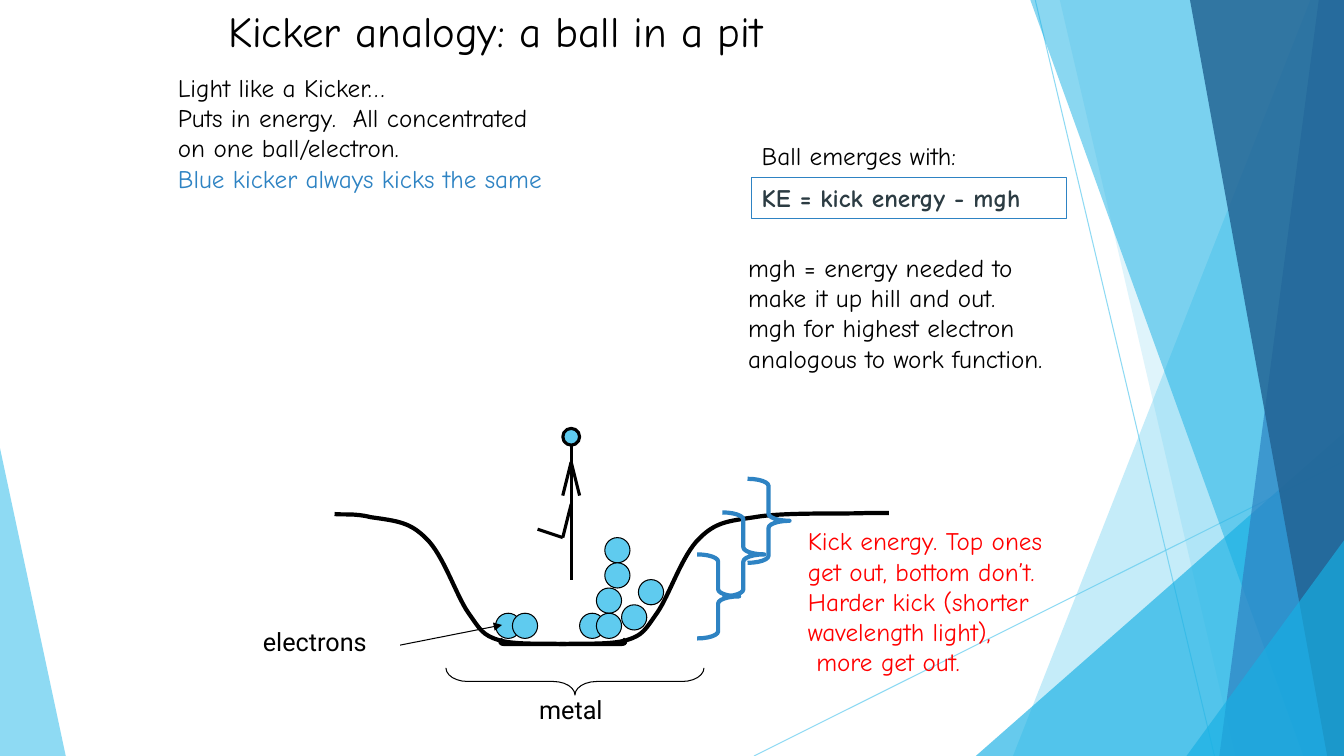
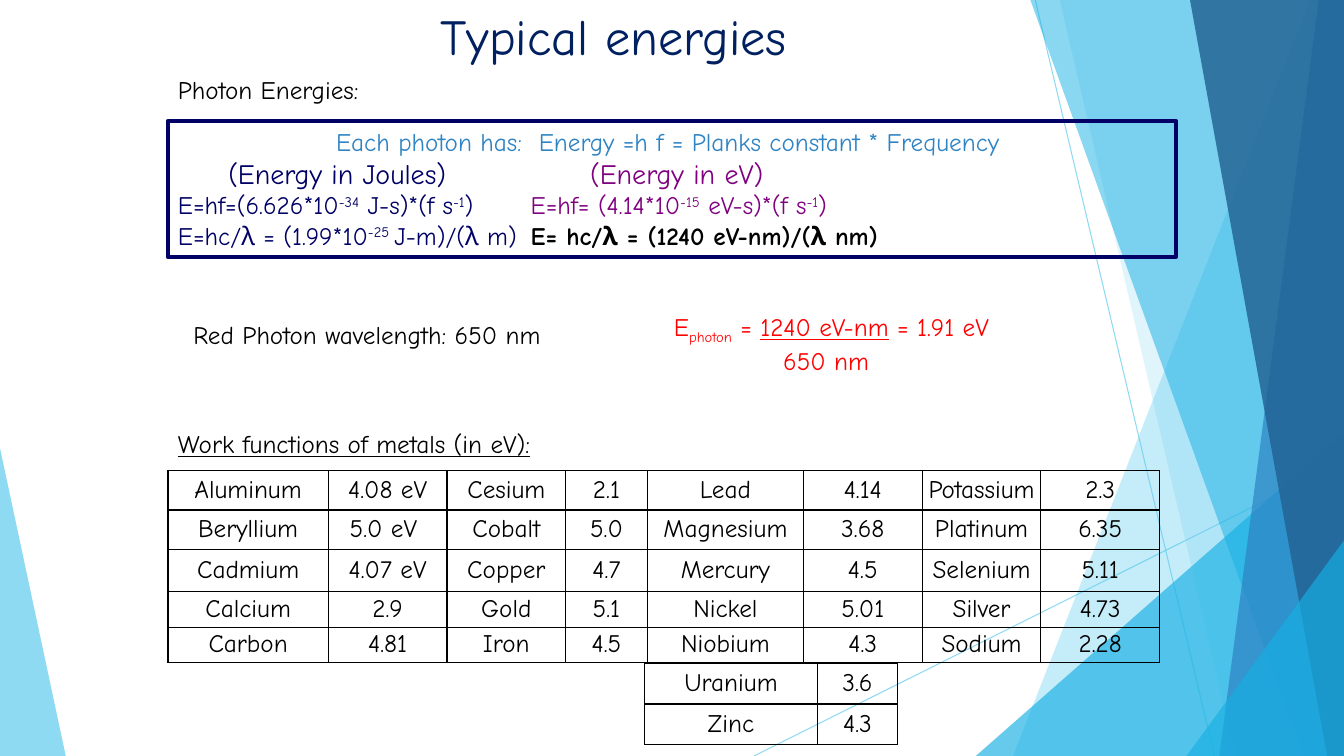
from dataclasses import dataclass
from lxml.etree import SubElement
from pptx import Presentation
from pptx.dml.color import RGBColor
from pptx.enum.shapes import MSO_CONNECTOR, MSO_SHAPE
from pptx.enum.text import MSO_ANCHOR, PP_ALIGN
from pptx.oxml.ns import qn
from pptx.util import Pt

BLACK = RGBColor(0x00, 0x00, 0x00)
SKY = RGBColor(0x5F, 0xCB, 0xEF)
CYAN = RGBColor(0x17, 0xB0, 0xE4)
BLUE = RGBColor(0x2E, 0x83, 0xC3)
STEEL = RGBColor(0x22, 0x62, 0x92)
SLATE = RGBColor(0x2C, 0x3C, 0x43)
NAVY = RGBColor(0x00, 0x00, 0x66)
TITLE_NAVY = RGBColor(0x00, 0x20, 0x60)
PURPLE = RGBColor(0x80, 0x00, 0x80)
RED = RGBColor(0xFF, 0x00, 0x00)
FONT, LABEL_FONT = "Comic Neue", "Roboto"
BODY = 18
WIDTH, HEIGHT = 960, 540

RAYS = [((538.6, 540), (960, 329.5)), ((739.5, 0), (867.5, 540))]
FACETS = [
    (SKY, 70, [(0, 320), (47, 540), (0, 540)]),
    (SKY, 36, [(936, 0), (723.6, 540), (960, 540), (960, 0)]),
    (SKY, 20, [(757, 0), (882.5, 540), (960, 540), (960, 0)]),
    (CYAN, 66, [(697, 540), (960, 309), (960, 540)]),
    (CYAN, 50, [(736, 0), (931, 540), (960, 540), (960, 0)]),
    (BLUE, 70, [(942, 0), (871, 540), (960, 540), (960, 0)]),
    (STEEL, 82, [(850, 0), (948, 540), (960, 540), (960, 0)]),
    (CYAN, 66, [(847.5, 540), (960, 386), (960, 540)]),
]

PIT_AXIS = 162
PIT_SLOPE = [
    (119.3, 150.5), (119.3, 151.2), (114.2, 153.4), (120.7, 154.1),
    (127.2, 154.1), (145.2, 154.1), (159.6, 154.1),
    (174, 153.4), (196.3, 154.8), (207.8, 151.2),
    (219.4, 147.6), (220.8, 144), (229.4, 131.8),
    (238.1, 119.5), (247.4, 90), (259.7, 78.5),
    (271.2, 67), (279.8, 66.2), (299.3, 63.4),
]
RIGHT_RIM = [(319.4, 59.8), (361.9, 61.2), (377.8, 60.5),
             (393.6, 60.5), (395.8, 60.5), (395, 60.5)]
LEFT_RIM = [(13.4, 60.5), (4.8, 61.9), (-1, 61.2)]
BALLS = [(174, 132), (186, 114), (114, 132), (126, 132), (192, 78),
         (192, 96), (216, 108), (186, 132), (204, 126)]
KICKER = [((168, 54), (168, 108)), ((168, 54), (162, 78)), ((144, 72), (162, 78)),
          ((168, 0), (168, 54)), ((168, 24), (162, 48)), ((168, 24), (174, 48))]
KICK_BRACES = [(294, 36), (276, 60), (258, 90)]

METALS = [
    ["Aluminum", "4.08 eV", "Cesium", "2.1", "Lead", "4.14", "Potassium", "2.3"],
    ["Beryllium", "5.0 eV ", "Cobalt", "5.0", "Magnesium", "3.68", "Platinum", "6.35"],
    ["Cadmium", "4.07 eV", "Copper", "4.7", "Mercury", "4.5", "Selenium", "5.11"],
    ["Calcium", "2.9", "Gold", "5.1", "Nickel", "5.01", "Silver", "4.73"],
    ["Carbon", "4.81", "Iron", "4.5", "Niobium", "4.3", "Sodium", "2.28"],
]
MORE_METALS = [["Uranium", "3.6"], ["Zinc", "4.3"]]


@dataclass
class Run:
    """A stretch of text that differs from its paragraph."""
    text: str
    color: RGBColor = None
    bold: bool = None
    underline: bool = None
    baseline: int = 0


@dataclass
class Para:
    """A paragraph: its runs and what they share."""
    runs: list
    color: RGBColor = BLACK
    size: float = BODY
    font: str = FONT
    bold: bool = False
    align: PP_ALIGN = PP_ALIGN.LEFT
    stops: tuple = ()


def sup(text, color=None):
    """Return a raised run."""
    return Run(text, color, baseline=30)


def fill_para(p, para):
    """Write one Para into a paragraph object."""
    p.alignment = para.align
    if para.stops:
        tabs = SubElement(p._p.get_or_add_pPr(), qn("a:tabLst"))
        for stop in para.stops:
            SubElement(tabs, qn("a:tab"), pos=str(Pt(stop)), algn="l")
    p.font.name, p.font.size = para.font, Pt(para.size)
    p.font.bold, p.font.color.rgb = para.bold, para.color
    for item in para.runs:
        run = item if isinstance(item, Run) else Run(item)
        r = p.add_run()
        r.text = run.text
        r.font.bold, r.font.underline = run.bold, run.underline
        if run.color is not None:
            r.font.color.rgb = run.color
        if run.baseline:
            r._r.get_or_add_rPr().set("baseline", str(run.baseline * 1000))


def add_text(s, x, y, w, h, paras):
    """Add a wrapped text box holding the given paragraphs."""
    sp = s.shapes.add_textbox(Pt(x), Pt(y), Pt(w), Pt(h))
    tf = sp.text_frame
    tf.word_wrap = True
    for i, para in enumerate(paras):
        fill_para(tf.add_paragraph() if i else tf.paragraphs[0], para)
    return sp


def plain(*lines, **style):
    """Return one Para for each line, all in the same style."""
    return [Para([line], **style) for line in lines]


def outline(sp, color, width):
    """Give a shape or connector a solid line."""
    sp.line.color.rgb = color
    sp.line.width = Pt(width)


def fade(sp, percent):
    """Set the opacity of every colour of a shape."""
    for color in sp._element.iter(qn("a:srgbClr")):
        SubElement(color, qn("a:alpha"), val=str(percent * 1000))


def add_line(s, start, end, color=BLACK, width=0.75, arrow=False):
    """Add a straight line, with an arrowhead at its end if asked."""
    c = s.shapes.add_connector(MSO_CONNECTOR.STRAIGHT, *map(Pt, start + end))
    outline(c, color, width)
    if arrow:
        SubElement(c.line._get_or_add_ln(), qn("a:tailEnd"), type="triangle")
    SubElement(c._element.spPr, qn("a:effectLst"))
    return c


def add_preset(s, kind, x, y, w, h, color, width, fill=None):
    """Add an outlined preset shape."""
    sp = s.shapes.add_shape(kind, Pt(x), Pt(y), Pt(w), Pt(h))
    sp.shadow.inherit = False
    outline(sp, color, width)
    if fill is None:
        sp.fill.background()
    else:
        sp.fill.solid()
        sp.fill.fore_color.rgb = fill
    return sp


def add_outline(s, points, close):
    """Add a freeform through the given points."""
    pts = [(Pt(x), Pt(y)) for x, y in points]
    fb = s.shapes.build_freeform(*pts[0], scale=1.0)
    fb.add_line_segments(pts[1:], close=close)
    sp = fb.convert_to_shape()
    sp.shadow.inherit = False
    return sp


def add_curve(s, points, color, width):
    """Add an open chain of cubic curves, three points for each."""
    sp = add_outline(s, points, False)
    sp.fill.background()
    outline(sp, color, width)
    outline_path = next(sp._element.iter(qn("a:path")))
    for i, segment in enumerate(outline_path.findall(qn("a:lnTo"))):
        if i % 3 == 0:
            cubic = SubElement(outline_path, qn("a:cubicBezTo"))
        cubic.append(segment[0])
        outline_path.remove(segment)


def add_backdrop(s, layout):
    """Draw the facets and rays, and hand them over to the layout."""
    for i, (fill, opacity, points) in enumerate(FACETS):
        sp = add_outline(s, points, True)
        sp.fill.solid()
        sp.fill.fore_color.rgb = fill
        sp.line.fill.background()
        fade(sp, opacity)
        if i == 0:
            for start, end in RAYS:
                fade(add_line(s, start, end, SKY), 70)
    for number, sp in enumerate(list(s.shapes), 100):
        next(sp._element.iter(qn("p:cNvPr"))).set("id", str(number))
        layout.shapes._spTree.append(sp._element)


def add_base(prs, title, x, size, color):
    """Add a slide with its title; the first one also sets up the layout."""
    layout = prs.slide_layouts[6]
    s = prs.slides.add_slide(layout)
    if len(prs.slides) == 1:
        add_backdrop(s, layout)
    add_text(s, x, 0, 648, 36, plain(title, size=size, color=color))
    return s


def add_pit(s, x, y):
    """Draw the pit, its electrons, the kicker and the labels from a corner."""
    def at(point):
        return x + point[0], y + point[1]

    mirrored = [(2 * PIT_AXIS - px, py) for px, py in PIT_SLOPE]
    for curve in (PIT_SLOPE + RIGHT_RIM, mirrored + LEFT_RIM):
        add_curve(s, [at(p) for p in curve], BLACK, 3)
    for start, end in KICKER:
        add_line(s, at(start), at(end), width=2.25)
    add_preset(s, MSO_SHAPE.OVAL, *at((162, 0)), 12, 12, BLACK, 2.25, SKY)
    for ball in BALLS:
        add_preset(s, MSO_SHAPE.OVAL, *at(ball), 18, 18, BLACK, 0.75, SKY)
    for corner in KICK_BRACES:
        sp = add_preset(s, MSO_SHAPE.RIGHT_BRACE, *at(corner), 30, 60, BLUE, 3)
        sp.adjustments[0] = 0.17
    sp = add_preset(s, MSO_SHAPE.LEFT_BRACE, *at((161, 88.6)), 19.4, 184.3, BLACK, 0.75)
    sp.rotation = 270
    sp.adjustments[0] = 0.8
    add_text(s, *at((138, 186.5)), 62, 29, plain("metal", font=LABEL_FONT))
    add_text(s, *at((-59.3, 137.5)), 90, 29, plain("electrons", font=LABEL_FONT))
    add_line(s, at((45.8, 154.8)), at((118.6, 140.4)), arrow=True)


def add_table(s, x, y, cols, rows, data, inset=None):
    """Add an unfilled, centred table with thin black borders."""
    table = s.shapes.add_table(len(rows), len(cols), Pt(x), Pt(y),
                               Pt(sum(cols)), Pt(sum(rows))).table
    table.first_row = table.horz_banding = False
    for col, w in zip(table.columns, cols):
        col.width = Pt(w)
    for row, h, values in zip(table.rows, rows, data):
        row.height = Pt(h)
        for cell, value in zip(row.cells, values):
            cell.vertical_anchor = MSO_ANCHOR.MIDDLE
            if inset is not None:
                cell.margin_left = cell.margin_right = Pt(inset)
                cell.margin_top = cell.margin_bottom = Pt(inset)
            fill_para(cell.text_frame.paragraphs[0], Para([value], align=PP_ALIGN.CENTER))
            for side in ("a:lnL", "a:lnR", "a:lnT", "a:lnB"):
                ln = SubElement(cell._tc.get_or_add_tcPr(), qn(side), w=str(Pt(1)))
                SubElement(SubElement(ln, qn("a:solidFill")), qn("a:srgbClr"), val=str(BLACK))
            cell.fill.background()


def add_formulas(s, x, y, w, h):
    """Add the framed photon energy formulas."""
    sp = add_text(s, x, y, w, h, [
        Para(["Each photon has:  Energy =h f = Planks constant * Frequency "],
             BLUE, align=PP_ALIGN.CENTER),
        Para(["\t(Energy in Joules)\t", Run("(Energy in eV)", PURPLE)],
             NAVY, 20, stops=(36, 294.5)),
        Para(["E=hf=(6.626*10", sup("-34"), " J-s)*(f s", sup("-1"), ")\t",
              Run("E=hf= (4.14*10", PURPLE), sup("-15", PURPLE),
              Run(" eV-s)*(f s", PURPLE), sup("-1", PURPLE), Run(")", PURPLE)],
             NAVY, stops=(252,)),
        Para(["E=hc/λ = (1.99*10", sup("-25 "), "J-m)/(λ m)\t",
              Run("E= hc/λ = (1240 eV-nm)/(λ nm)", BLACK, True)],
             NAVY, stops=(252,)),
    ])
    outline(sp, NAVY, 3)


def kicker_slide(prs):
    """Build the slide on the kicker analogy."""
    s = add_base(prs, "Kicker analogy: a ball in a pit", 156, 30.6, BLACK)
    add_text(s, 120, 48, 384, 94, plain(
        "Light like a Kicker…", "Puts in energy.  All concentrated", "on one ball/electron.")
        + plain("Blue kicker always kicks the same", color=BLUE))
    sp = add_text(s, 537, 126.7, 224.6, 29.2,
                  plain("KE = kick energy - mgh", color=SLATE, bold=True))
    outline(sp, BLUE, 0.75)
    add_text(s, 537, 96.5, 169, 29, plain("Ball emerges with:"))
    add_text(s, 527.3, 176.7, 245, 94, plain(
        "mgh = energy needed to", "make it up hill and out.",
        "mgh for highest electron", "analogous to work function."))
    add_pit(s, 240, 306)
    add_text(s, 570, 372, 308, 117, plain(
        "Kick energy. Top ones", "get out, bottom don’t.", "Harder kick (shorter",
        "wavelength light),", " more get out.", color=RED))


def energies_slide(prs):
    """Build the slide on photon energies and work functions."""
    s = add_base(prs, "Typical energies", 307.5, 36, TITLE_NAVY)
    add_text(s, 120, 49.5, 161, 29, plain("Photon Energies:"))
    add_text(s, 120, 302.5, 308, 29,
             [Para([Run("Work functions of metals (in eV):", underline=True)])])
    add_table(s, 120, 336, [114.5, 84.8, 84.8, 58.3, 111.6, 84.8, 84.8, 84.8],
              [28.3, 28.3, 30.2, 25.2, 25.2], METALS, 0)
    add_table(s, 460.5, 473.8, [123.3, 57.5], [29, 29], MORE_METALS)
    add_text(s, 131, 224.5, 281.5, 29, plain("Red Photon wavelength: 650 nm"))
    add_text(s, 474.3, 218.8, 264, 51, [
        Para(["E", Run("photon", baseline=-25), " = ", Run("1240 eV-nm", underline=True),
              " = 1.91 eV"], RED),
        Para(["\t650 nm"], RED, stops=(78,))])
    add_formulas(s, 120, 86.4, 720, 97.2)


def main():
    """Build and save the presentation."""
    prs = Presentation()
    prs.slide_width, prs.slide_height = Pt(WIDTH), Pt(HEIGHT)
    kicker_slide(prs)
    energies_slide(prs)
    prs.save("out.pptx")


if __name__ == "__main__":
    main()
